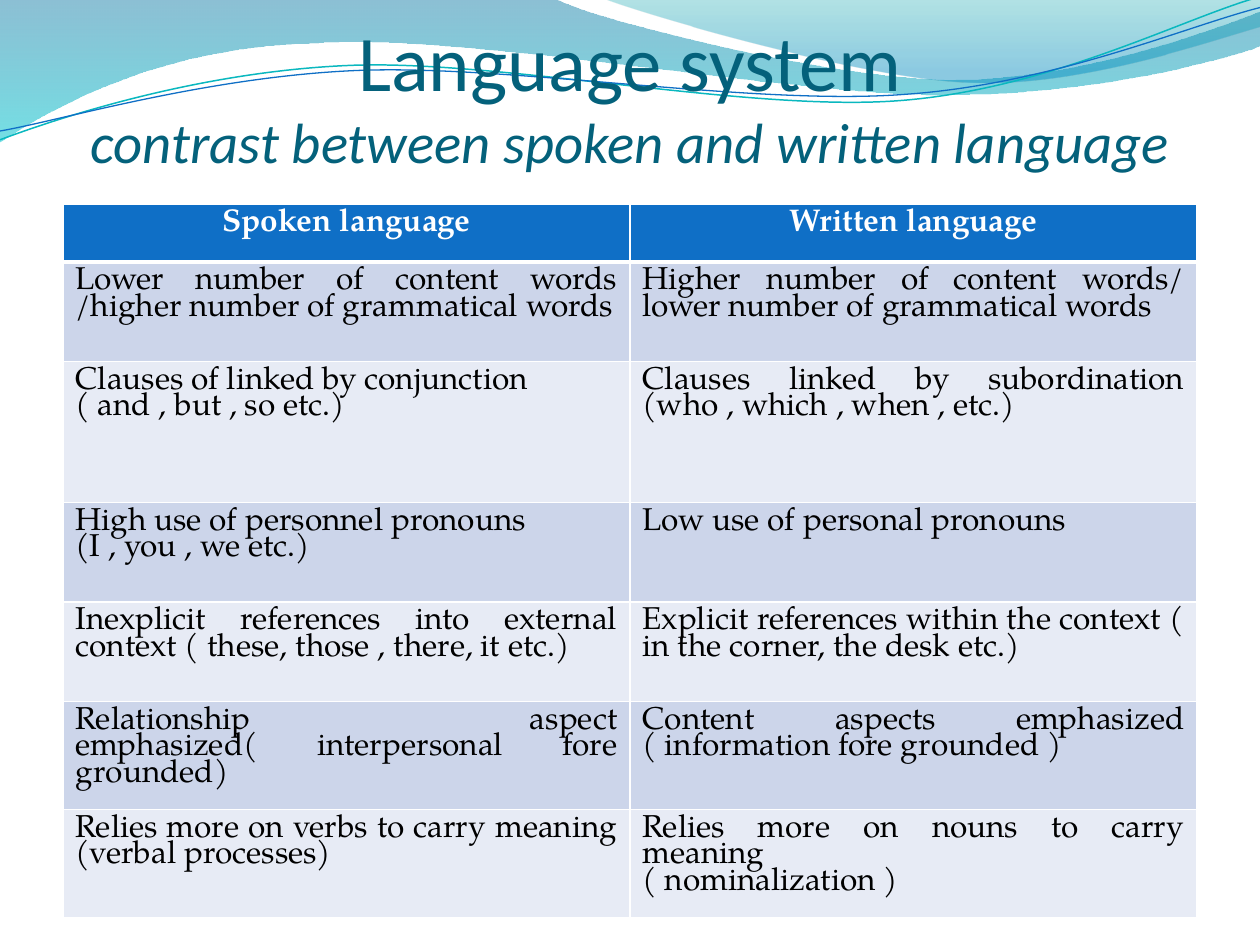
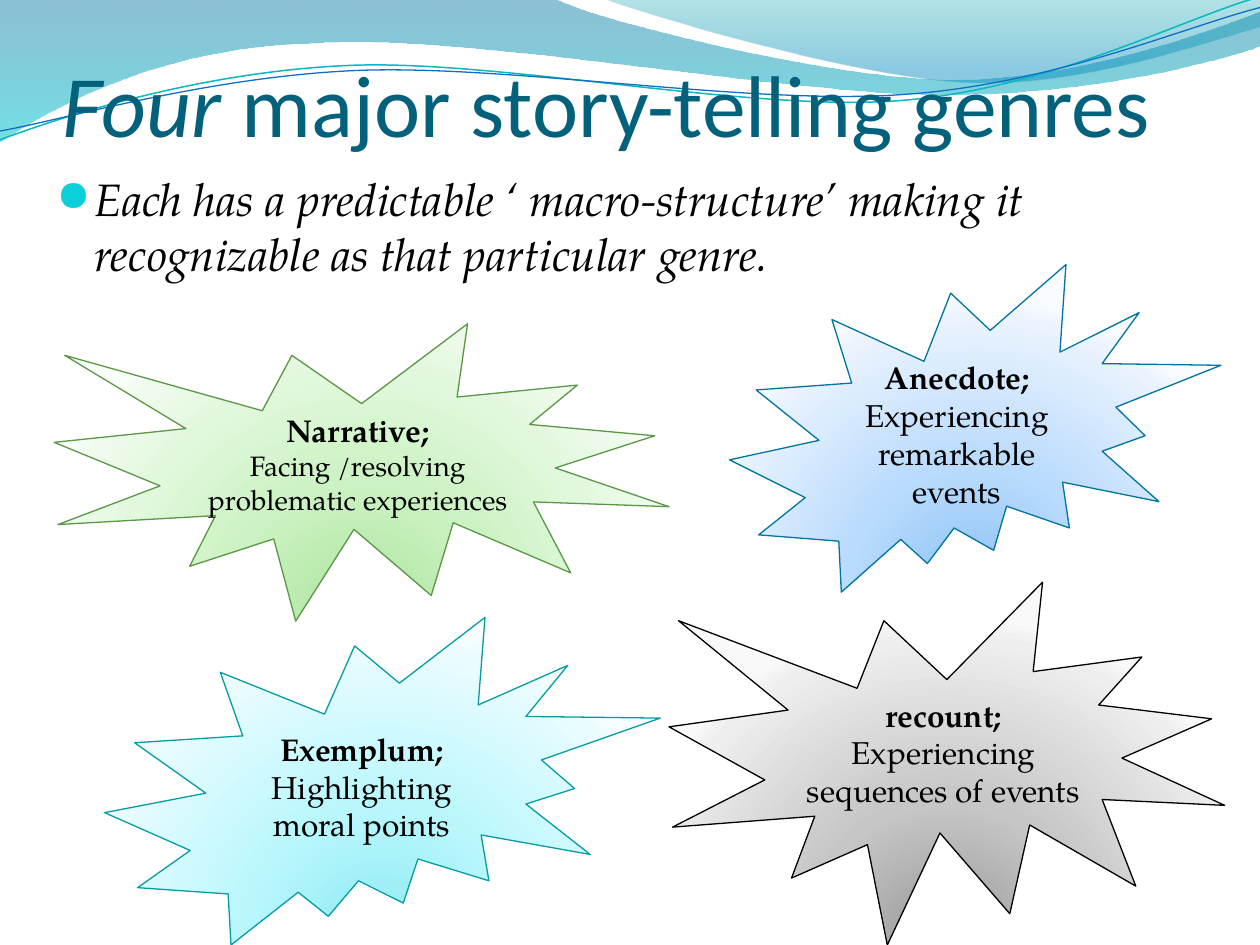
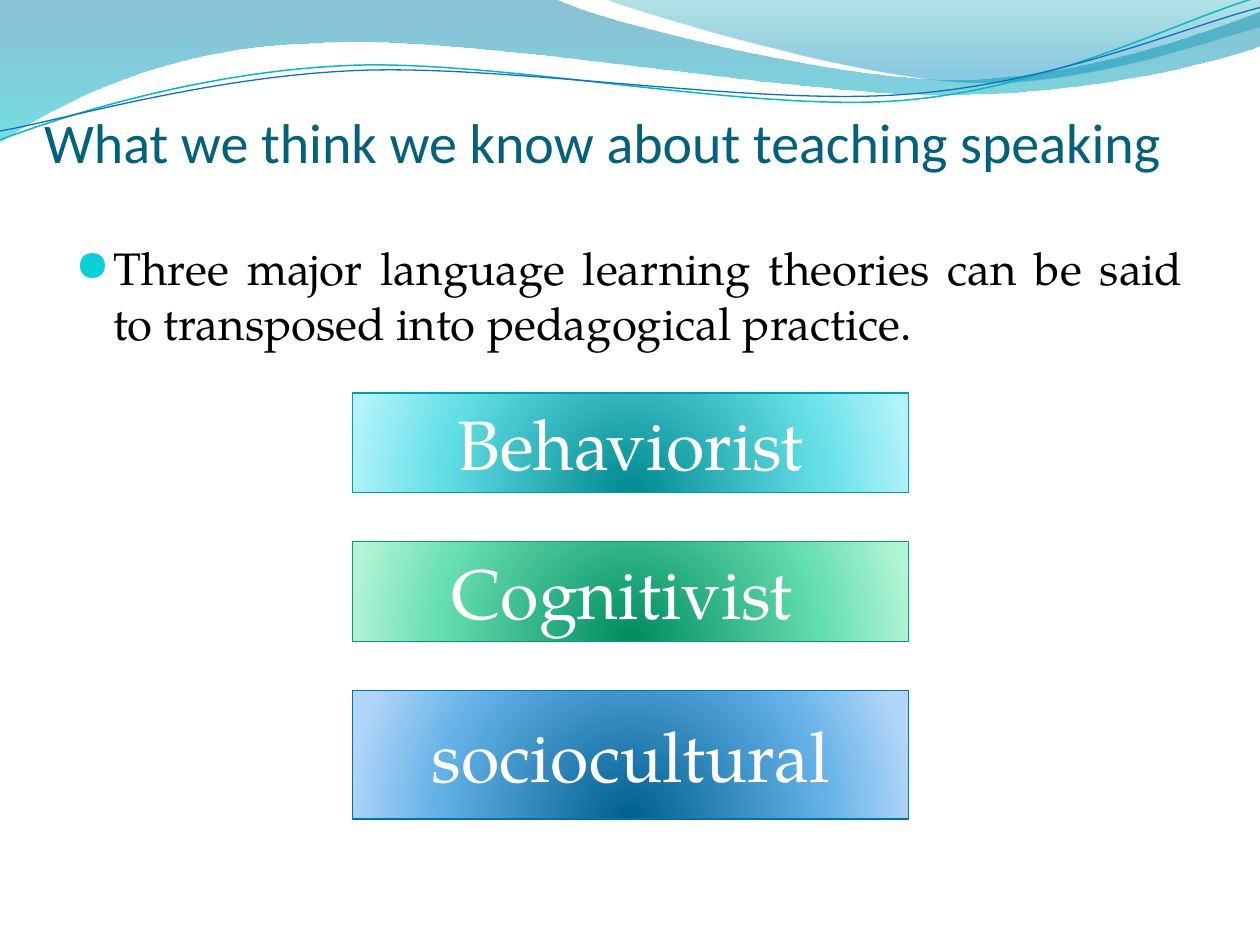
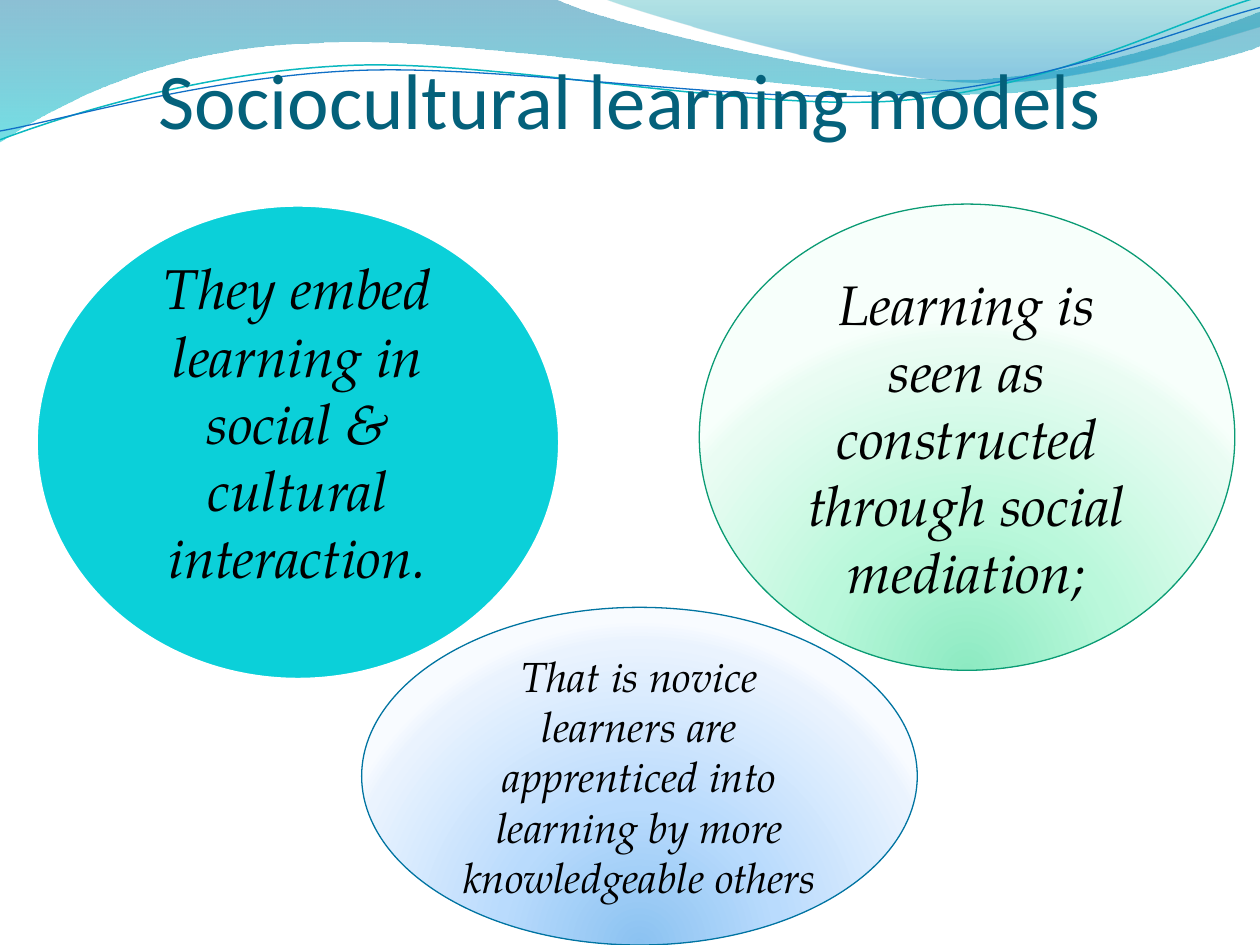
"""Build four slides on spoken language, story genres and learning theories."""
from itertools import chain

from pptx import Presentation
from pptx.dml.color import RGBColor
from pptx.enum.shapes import MSO_SHAPE as SHAPE
from pptx.enum.text import MSO_ANCHOR as ANCHOR, PP_ALIGN as ALIGN
from pptx.oxml import parse_xml
from pptx.oxml.ns import nsdecls, qn
from pptx.oxml.xmlchemy import OxmlElement
from pptx.util import Inches, Pt

TITLE_FONT, BODY_FONT = "Calibri", "TeX Gyre Pagella"
COLORS = {
    "title": "04617B", "text": "000000", "white": "FFFFFF", "bullet": "0BD0D9",
    "header": "0F6FC6", "odd row": "CCD5EA", "even row": "E7EBF5",
    "green": "5B9747", "blue": "0074A1", "grey": "000000",
    "teal": "069CA3", "mint": "0A9B74", "wave teal": "0AB8BF", "wave blue": "0F6FC6",
}
LIGHT_STOPS, DEEP_STOPS = (0, 43, 93, 100), (0, 68, 100)
LIGHT = {
    "green": ("ACE49F", "CDF3C4", "EFFBED", "F9FFF8"),
    "blue": ("8BC2F1", "B9DBFD", "EAF3FE", "F8FBFF"),
    "grey": ("979797", "C6C6C6", "EEEEEE", "F9F9F9"),
    "teal": ("8BE9F1", "B9F7FD", "EAFCFE", "F8FEFF"),
    "mint": ("8DEAC2", "BAF8DB", "EAFCF3", "F7FFFB"),
}
DEEP = {
    "teal": ("008A91", "64DFE7", "B1F3F9"),
    "mint": ("008C60", "65DEB0", "B2F4D6"),
    "blue": ("006091", "64B1E7", "B1D6F9"),
}
RADIAL = '<a:path path="circle"><a:fillToRect l="50000" t="130000" r="50000" b="-30000"/></a:path>'
DOWNWARD = '<a:lin ang="5400000" scaled="1"/>'

WAVE_BANDS = [
    ([(0, 0)],
     [[(4.4, -0.01)],
      [(4.76, 0.17), (6.64, 0.63), (7.58, 0.63)],
      [(8.53, 0.63), (9.58, 0.26), (10, 0.09)],
      [(10.01, 0.36)],
      [(9.83, 0.44), (8.7, 0.76), (7.46, 0.75)],
      [(6.22, 0.75), (3.82, 0.28), (2.57, 0.34)],
      [(1.29, 0.36), (0.46, 0.83), (-0.01, 1.13)]],
     [(0, "0074A1", 45), (100, "00C6CF", 55)]),
    ([(4.79, -0.01)],
     [[(5.09, 0.11), (6.82, 0.62), (7.69, 0.65)],
      [(8.56, 0.69), (9.61, 0.32), (10, 0.21)],
      [(10, 0)]],
     [(0, "00A1A9", 30), (80, "008BBF", 45)]),
]
WAVE_LINES = [
    ([(0, 1.11)],
     [[(0.48, 0.93), (1.58, 0.57), (2.77, 0.52)],
      [(3.95, 0.47), (5.93, 0.89), (7.13, 0.8)],
      [(8.33, 0.71), (9.38, 0.15), (9.98, -0.02)]],
     "wave teal", 0.85),
    ([(0, 1.04)],
     [[(0.47, 0.96), (1.64, 0.61), (2.83, 0.56)],
      [(4.03, 0.51), (5.97, 0.84), (7.17, 0.75)],
      [(8.36, 0.67), (9.41, 0.21), (10, 0.06)]],
     "wave blue", 0.75),
]

CONTRAST_TITLE = [("Language system\n", 45, False),
                  ("contrast between spoken and written language", 32.4, True)]
CONTRASTS = [
    ("Spoken language", "Written language"),
    ("Lower number of content words /higher number of grammatical words",
     "Higher number of content words/ lower number of grammatical words"),
    ("Clauses of linked by conjunction\n( and , but , so etc.)",
     "Clauses linked by subordination (who , which , when , etc.)"),
    ("High use of personnel pronouns\n(I , you , we etc.)",
     "Low use of personal pronouns"),
    ("Inexplicit references into external context ( these, those , there, it etc.)",
     "Explicit references within the context ( in the corner, the desk etc.)"),
    ("Relationship aspect emphasized( interpersonal fore grounded)",
     "Content aspects emphasized ( information fore grounded )"),
    ("Relies more on verbs to carry meaning (verbal processes)",
     "Relies more on nouns to carry meaning\n( nominalization )"),
]
ROW_HEIGHTS = [0.46, 0.79, 1.12, 0.79, 0.79, 0.79, 0.79]

GENRES_TITLE = [("Four", 50, True), (" major story-telling genres", 50, False)]
GENRES_INTRO = ("Each has a predictable ‘ macro-structure’ making it "
                "recognizable as that particular genre.")
GENRES = [
    ("Narrative;", "Facing /resolving problematic experiences", 16,
     SHAPE.EXPLOSION1, "green", (0.43, 2.57, 4.88, 2.36)),
    ("Anecdote;", "Experiencing remarkable events", 18,
     SHAPE.EXPLOSION2, "blue", (5.79, 2.1, 3.9, 2.6)),
    ("recount;", "Experiencing sequences of events", 18,
     SHAPE.EXPLOSION1, "grey", (5.31, 4.62, 4.41, 2.88)),
    ("Exemplum;", "Highlighting moral points", 18,
     SHAPE.EXPLOSION2, "teal", (0.83, 4.9, 4.41, 2.6)),
]

THEORIES_TITLE = [("What we think we know about teaching speaking", 32, False)]
THEORIES_INTRO = ("Three major language learning theories can be said to "
                  "transposed into pedagogical practice.")
THEORIES = [("Behaviorist", "teal", 0.79), ("Cognitivist ", "mint", 0.79),
            ("sociocultural", "blue", 1.02)]

MODELS_TITLE = [("Sociocultural learning models", 45, False)]
MODELS = [
    ("They embed learning in social & cultural interaction.", 32, None,
     (0.28, 1.62, 4.17, 3.78)),
    ("Learning is seen as constructed through social mediation;", 32, "mint",
     (5.55, 1.62, 4.25, 3.7)),
    ("That is novice learners are apprenticed into learning by more knowledgeable others",
     24, "blue", (2.87, 4.82, 4.41, 2.68)),
]


def rgb(name):
    return RGBColor.from_string(COLORS[name])


def inches(box):
    return [Inches(length) for length in box]


def set_font(font, size, color="text", name=BODY_FONT, bold=False, italic=False):
    font.size, font.name, font.bold, font.italic = Pt(size), name, bold, italic
    font.color.rgb = rgb(color)


def set_gradient(shape, stops, direction):
    stop_xml = "".join(
        f'<a:gs pos="{pos * 1000}"><a:srgbClr val="{color}">'
        f'<a:alpha val="{opacity * 1000}"/></a:srgbClr></a:gs>'
        for pos, color, opacity in stops)
    shape.fill.background()
    properties = shape._element.spPr
    properties.replace(properties.find(qn("a:noFill")), parse_xml(
        f'<a:gradFill {nsdecls("a")} rotWithShape="1"><a:gsLst>{stop_xml}</a:gsLst>'
        f'{direction}</a:gradFill>'))


def set_line(shape, color, width):
    shape.line.color.rgb = rgb(color)
    shape.line.width = Pt(width)


def add_curve(slide, start, steps, close):
    """Draw a freeform whose three-point steps are Bézier curves."""
    (x, y), = start
    builder = slide.shapes.build_freeform(Inches(x), Inches(y))
    builder.add_line_segments([inches(point) for point in chain(*steps)], close=close)
    curve = builder.convert_to_shape()
    curve.shadow.inherit = False
    segments = iter(list(curve._element.iter(qn("a:lnTo"))))
    for step in steps:
        first, *others = [next(segments) for _ in step]
        if others:
            bezier = OxmlElement("a:cubicBezTo")
            first.addprevious(bezier)
            for segment in (first, *others):
                bezier.append(segment[0])
                segment.getparent().remove(segment)
    return curve


def add_waves(slide):
    for start, steps, stops in WAVE_BANDS:
        band = add_curve(slide, start, steps, True)
        set_gradient(band, stops, DOWNWARD)
        band.line.fill.background()
    for start, steps, color, width in WAVE_LINES:
        wave = add_curve(slide, start, steps, False)
        wave.fill.background()
        set_line(wave, color, width)


def add_title(slide, runs, box, align=ALIGN.LEFT):
    frame = slide.shapes.add_textbox(*inches(box)).text_frame
    frame.word_wrap, frame.vertical_anchor = True, ANCHOR.BOTTOM
    frame.margin_left = frame.margin_right = frame.margin_bottom = 0
    heading = frame.paragraphs[0]
    heading.alignment = align
    set_font(heading.font, runs[0][1], "title", TITLE_FONT)
    for text, size, italic in runs:
        run = heading.add_run()
        run.text = text.rstrip("\n")
        run.font.size, run.font.italic = Pt(size), italic
        if text.endswith("\n"):
            heading.add_line_break()


def add_bullet(slide, text, box, align=ALIGN.LEFT, italic=False):
    frame = slide.shapes.add_textbox(*inches(box)).text_frame
    frame.word_wrap = True
    point = frame.paragraphs[0]
    point.text, point.alignment = text, align
    properties = point._p.get_or_add_pPr()
    properties.set("marL", str(Inches(0.3)))
    properties.set("indent", str(-Inches(0.3)))
    properties.extend(parse_xml(
        f'<a:pPr {nsdecls("a")}><a:spcBef><a:spcPct val="20000"/></a:spcBef>'
        f'<a:buClr><a:srgbClr val="{COLORS["bullet"]}"/></a:buClr>'
        '<a:buSzPct val="95000"/><a:buChar char="●"/></a:pPr>'))
    set_font(point.font, 26, italic=italic)


def add_figure(slide, kind, box, paragraphs):
    """Add a preset shape with centred paragraphs of (text, font settings)."""
    figure = slide.shapes.add_shape(kind, *inches(box))
    figure.shadow.inherit = False
    frame = figure.text_frame
    frame.word_wrap, frame.vertical_anchor = True, ANCHOR.MIDDLE
    for index, (text, font) in enumerate(paragraphs):
        line = frame.add_paragraph() if index else frame.paragraphs[0]
        line.text, line.alignment = text, ALIGN.CENTER
        set_font(line.font, **font)
    return figure


def paint(figure, tone, positions, shades):
    stops = [(pos, shade, 100) for pos, shade in zip(positions, shades[tone])]
    set_gradient(figure, stops, RADIAL)
    set_line(figure, tone, 0.75)


def set_borders(cell, row):
    widths = {"L": 1, "R": 1, "T": 3 if row == 1 else 1, "B": 1 if row else 3}
    for side, width in widths.items():
        cell._tc.get_or_add_tcPr().append(parse_xml(
            f'<a:ln{side} {nsdecls("a")} w="{Pt(width)}"><a:solidFill>'
            f'<a:srgbClr val="{COLORS["white"]}"/></a:solidFill></a:ln{side}>'))


def add_contrasts(slide):
    table = slide.shapes.add_table(
        len(CONTRASTS), 2, *inches((0.5, 1.62, 9, sum(ROW_HEIGHTS)))).table
    for row, (height, texts) in enumerate(zip(ROW_HEIGHTS, CONTRASTS)):
        table.rows[row].height = Inches(height)
        is_header = row == 0
        fill = "header" if is_header else "odd row" if row % 2 else "even row"
        for column, text in enumerate(texts):
            cell = table.cell(row, column)
            cell.text = text
            set_borders(cell, row)
            cell.fill.solid()
            cell.fill.fore_color.rgb = rgb(fill)
            for line in cell.text_frame.paragraphs:
                line.alignment = ALIGN.CENTER if is_header else ALIGN.JUSTIFY
                line.line_spacing = 0.84
                set_font(line.font, 18, "white" if is_header else "text", bold=is_header)


def build_contrast(slide):
    add_title(slide, CONTRAST_TITLE, (0.5, 0.77, 9, 0.62), ALIGN.CENTER)
    add_contrasts(slide)


def build_genres(slide):
    add_title(slide, GENRES_TITLE, (0.5, 0.3, 9, 0.93))
    add_bullet(slide, GENRES_INTRO, (0.35, 1.31, 9.37, 6.19), italic=True)
    for genre, purpose, size, kind, tone, box in GENRES:
        burst = add_figure(slide, kind, box, [(genre, {"size": 18, "bold": True}),
                                              (purpose, {"size": size})])
        paint(burst, tone, LIGHT_STOPS, LIGHT)


def build_theories(slide):
    add_title(slide, THEORIES_TITLE, (0.35, 0.3, 9.29, 1.09))
    add_bullet(slide, THEORIES_INTRO, (0.5, 1.86, 9, 5.06), ALIGN.JUSTIFY)
    top, gap = 3.12, 0.39
    for theory, tone, height in THEORIES:
        bar = add_figure(slide, SHAPE.RECTANGLE, (2.8, top, 4.41, height),
                         [(theory, {"size": 40, "color": "white"})])
        paint(bar, tone, DEEP_STOPS, DEEP)
        top += height + gap


def build_models(slide):
    add_title(slide, MODELS_TITLE, (0.5, 0.36, 9, 0.79), ALIGN.CENTER)
    for idea, size, tone, box in MODELS:
        circle = add_figure(slide, SHAPE.FLOWCHART_CONNECTOR, box,
                            [(idea, {"size": size, "italic": True})])
        if tone:
            paint(circle, tone, LIGHT_STOPS, LIGHT)
        else:
            circle.fill.solid()
            circle.fill.fore_color.rgb = rgb("bullet")
            set_line(circle, "white", 3)
            circle.text_frame.margin_bottom = Inches(0.37)


def main():
    deck = Presentation()
    deck.slide_width, deck.slide_height = Inches(10), Inches(7.5)
    for build in (build_contrast, build_genres, build_theories, build_models):
        slide = deck.slides.add_slide(deck.slide_layouts[6])
        add_waves(slide)
        build(slide)
    deck.save("out.pptx")


if __name__ == "__main__":
    main()
